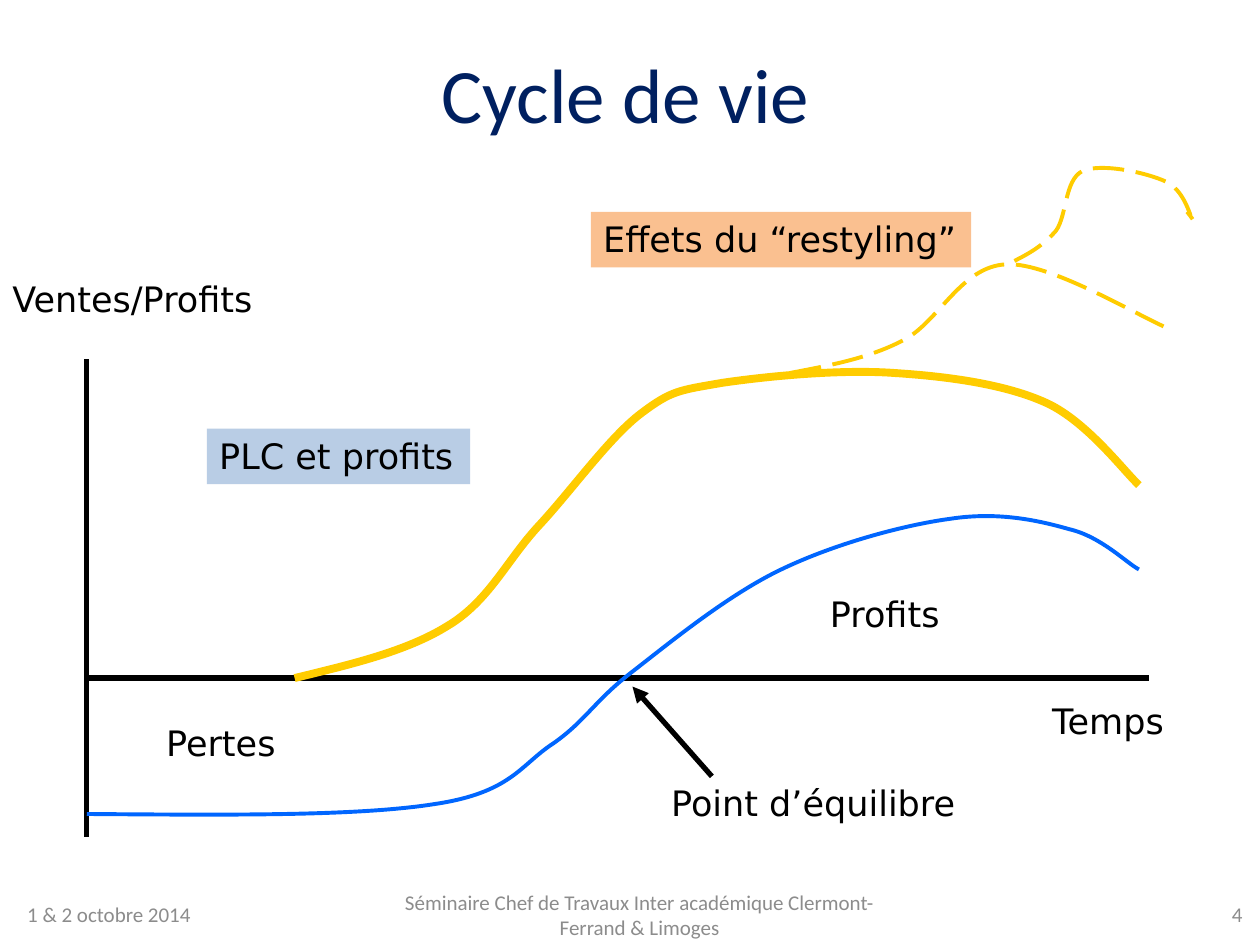
from lxml import etree
from pptx import Presentation
from pptx.dml.color import RGBColor
from pptx.enum.dml import MSO_LINE
from pptx.enum.shapes import MSO_CONNECTOR, MSO_SHAPE
from pptx.enum.text import MSO_ANCHOR, MSO_AUTO_SIZE, PP_ALIGN
from pptx.oxml.ns import qn
from pptx.util import Cm, Pt

LEFT, MID, RIGHT = PP_ALIGN.LEFT, PP_ALIGN.CENTER, PP_ALIGN.RIGHT
TOP, CORE = MSO_ANCHOR.TOP, MSO_ANCHOR.MIDDLE
GROW, FIXED = MSO_AUTO_SIZE.SHAPE_TO_FIT_TEXT, MSO_AUTO_SIZE.NONE
DASH = MSO_LINE.LONG_DASH
RECT, LINE = MSO_SHAPE.RECTANGLE, MSO_CONNECTOR.STRAIGHT
HEX = {"title": "002060", "foot": "8C8C8C", "ink": "000000", "sales": "FFCC00",
       "profit": "0066FF", "cycle": "B9CDE5", "style": "FAC090"}
COLOR = {name: RGBColor.from_string(code) for name, code in HEX.items()}

deck = Presentation()
deck.slide_width, deck.slide_height = Cm(25.4), Cm(19.05)
slide = deck.slides.add_slide(deck.slide_layouts[6])
shapes = slide.shapes


def write(words, place, size, font, color, align=LEFT, anchor=TOP, wrap=False, fill=None):
    area = [Cm(n) for n in place]
    if fill:
        box = shapes.add_shape(RECT, *area)
        box.shadow.inherit = False
        box.fill.solid()
        box.fill.fore_color.rgb = COLOR[fill]
        box.line.fill.background()
    else:
        box = shapes.add_textbox(*area)
    frame = box.text_frame
    frame.word_wrap = wrap
    frame.auto_size = FIXED if wrap else GROW
    frame.vertical_anchor = anchor
    para = frame.paragraphs[0]
    para.alignment = align
    run = para.add_run()
    run.text = words
    run.font.size, run.font.name = Pt(size), font
    run.font.color.rgb = COLOR[color]


def curve(points, color, width, dash=None):
    """Draw Bézier arcs; points are in hundredths of a centimetre."""
    pen = shapes.build_freeform(*points[0], scale=Cm(0.01))
    pen.add_line_segments(points[1:], close=False)
    shape = pen.convert_to_shape()
    # Merge each three line steps into one cubic arc
    steps = list(shape.element.iter(qn("a:lnTo")))
    for i in range(0, len(steps), 3):
        arc = etree.Element(qn("a:cubicBezTo"))
        steps[i].addprevious(arc)
        for step in steps[i:i + 3]:
            arc.append(step[0])
            step.getparent().remove(step)
    shape.shadow.inherit = False
    shape.fill.background()
    shape.line.color.rgb = COLOR[color]
    shape.line.width = Pt(width)
    if dash:
        shape.line.dash_style = dash


# Title and footer
write("Cycle de vie", (3.71, 0.41, 17.81, 2.9), 44, "Calibri", "title", MID, CORE, True)
for words, place, align in [
    ("1 & 2 octobre 2014", (0.3, 17.91, 5.92, 1.02), LEFT),
    ("Séminaire Chef de Travaux Inter académique Clermont-Ferrand & Limoges",
     (7.7, 17.93, 10.39, 1.02), MID),
    ("4", (19.38, 17.91, 5.92, 1.02), RIGHT),
]:
    write(words, place, 12, "Calibri", "foot", align, CORE, True)

# Axes and break-even arrow
for ends in [(1.75, 7.24, 1.75, 16.87), (1.75, 13.67, 23.16, 13.67),
             (14.35, 15.65, 12.75, 13.84)]:
    line = shapes.add_connector(LINE, *[Cm(n) for n in ends])
    line.line.color.rgb = COLOR["ink"]
    line.line.width = Pt(3)
    etree.SubElement(line.element.spPr, qn("a:effectLst"))
etree.SubElement(line.line._get_or_add_ln(), qn("a:tailEnd"), type="triangle")

# Sales curve
curve([(594, 1367), (709, 1339), (820, 1313), (902, 1262),
       (986, 1212), (1021, 1130), (1087, 1059),
       (1153, 988), (1229, 881), (1293, 833),
       (1354, 787), (1369, 787), (1455, 772),
       (1542, 759), (1694, 744), (1803, 752),
       (1913, 759), (2029, 775), (2111, 813),
       (2192, 851), (2266, 950), (2296, 978)], "sales", 4.5)

# Profit curve
curve([(175, 1641), (447, 1643), (719, 1646), (876, 1621),
       (1031, 1598), (1049, 1542), (1115, 1499),
       (1181, 1453), (1199, 1412), (1275, 1354),
       (1351, 1295), (1468, 1199), (1575, 1148),
       (1681, 1097), (1819, 1059), (1915, 1046),
       (2012, 1031), (2093, 1049), (2156, 1067),
       (2220, 1082), (2271, 1135), (2296, 1148)], "profit", 2.25)

# Two restyling waves
curve([(1593, 752), (1669, 737), (1748, 724), (1821, 686),
       (1892, 650), (1938, 536), (2029, 533),
       (2118, 528), (2304, 643), (2362, 665)], "sales", 2.25, DASH)
curve([(2045, 526), (2075, 511), (2103, 495), (2129, 465),
       (2151, 434), (2146, 363), (2182, 345),
       (2220, 328), (2311, 348), (2350, 366),
       (2388, 384), (2398, 434), (2405, 445),
       (2413, 455), (2403, 439), (2393, 427)], "sales", 2.25, DASH)

# Labels
for words, x, y, width, fill in [
    ("Ventes/Profits", 0, 5.46, 5.49, None),
    ("Temps", 20.96, 13.97, 2.82, None),
    ("PLC et profits", 4.17, 8.64, 5.31, "cycle"),
    ("Pertes", 3.1, 14.43, 2.72, None),
    ("Point d’équilibre", 13.28, 15.62, 6.25, None),
    ("Profits", 16.48, 11.81, 2.74, None),
    ("Effets du “restyling”", 11.91, 4.27, 7.67, "style"),
]:
    write(words, (x, y, width, 1.12), 20, "DejaVu Sans", "ink", fill=fill)

deck.save("out.pptx")
